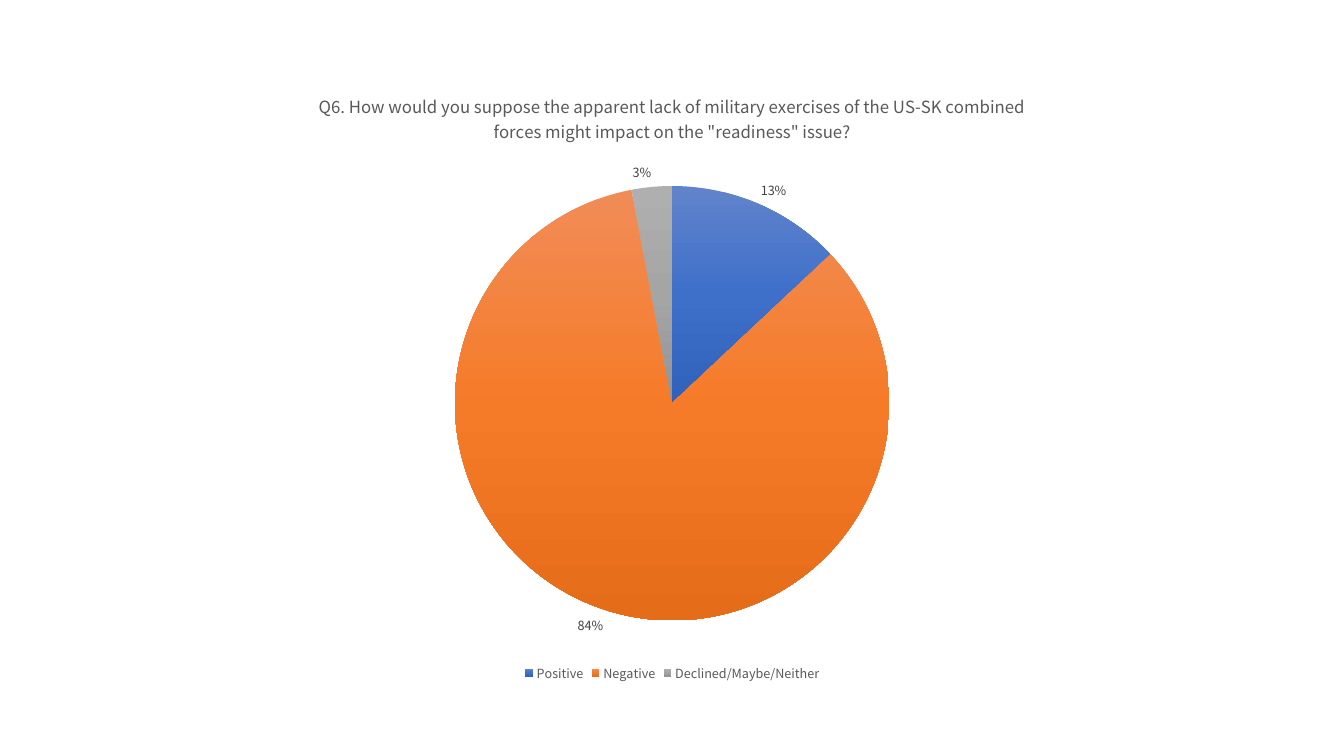
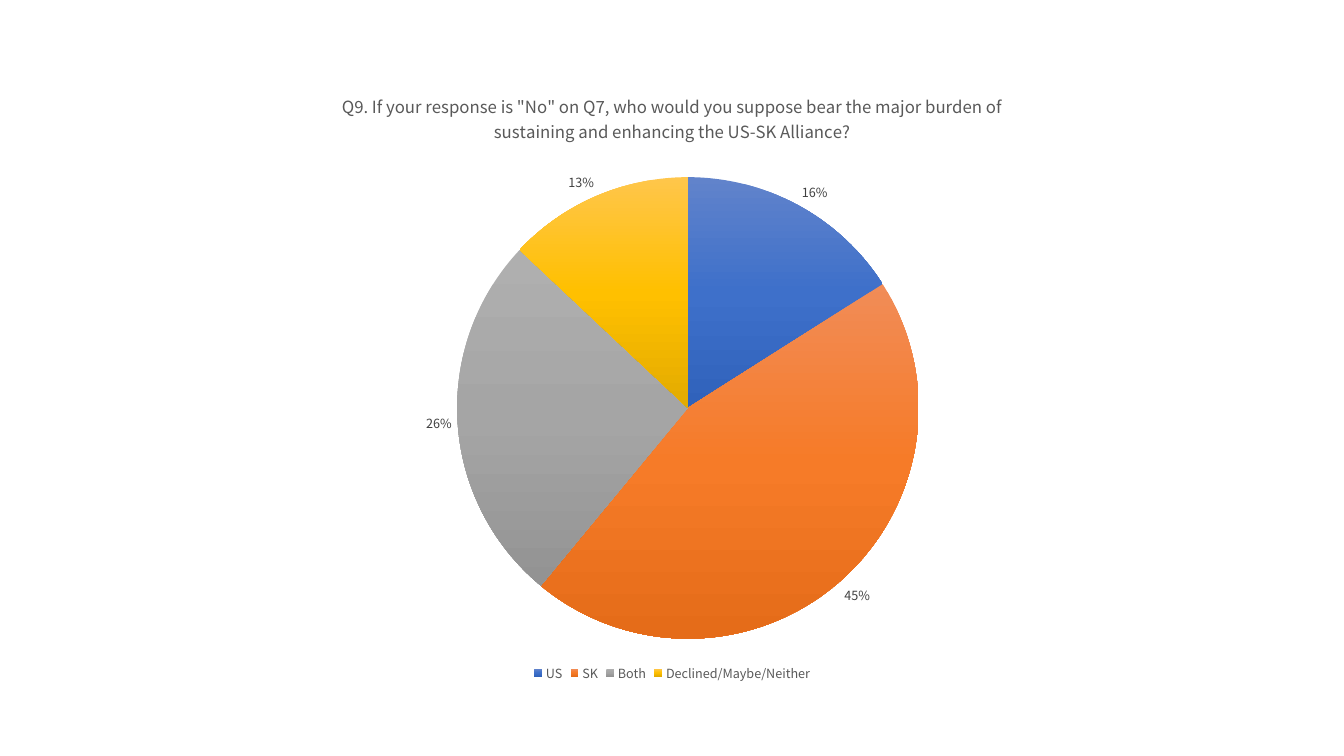
from dataclasses import dataclass

from lxml.etree import SubElement
from pptx import Presentation
from pptx.chart.chart import Chart
from pptx.chart.data import CategoryChartData
from pptx.dml.color import RGBColor
from pptx.enum.chart import XL_CHART_TYPE, XL_LABEL_POSITION, XL_LEGEND_POSITION
from pptx.oxml.ns import qn
from pptx.presentation import Presentation as Deck
from pptx.text.text import Font
from pptx.util import Cm, Pt


@dataclass(frozen=True)
class Theme:
    """Colours, typeface and type sizes shared by all slides."""

    font: str = "Noto Sans CJK KR"
    title_size: int = 12
    small_size: int = 9
    base_size: int = 10
    base_color: str = "000000"
    text_color: str = "595959"
    label_color: str = "404040"
    gradients: tuple[tuple[str, str, str], ...] = (
        ("6183CB", "3E70CA", "3062BB"),
        ("F18C57", "F67B28", "E56C19"),
        ("AFAFAF", "A5A5A5", "939393"),
        ("FFC64B", "FFC000", "E3AB00"),
    )


@dataclass(frozen=True)
class Survey:
    """One survey question with the share of each answer."""

    number: str
    question: str
    shares: dict[str, float]

    @property
    def heading(self) -> str:
        """Return the number and question, parted by an em space."""
        return f"{self.number} {self.question}"


THEME = Theme()
UNDECIDED = "Declined/Maybe/Neither"
SURVEYS = (
    Survey(
        "Q6.",
        "How would you suppose the apparent lack of military exercises of the "
        'US-SK combined forces might impact on the "readiness" issue?',
        {"Positive": 0.13, "Negative": 0.84, UNDECIDED: 0.03},
    ),
    Survey(
        "Q9.",
        'If your response is "No" on Q7, who would you suppose bear the major '
        "burden of sustaining and enhancing the US-SK Alliance?",
        {"US": 0.16, "SK": 0.45, "Both": 0.26, UNDECIDED: 0.13},
    ),
)


def format_font(font: Font, *, size: int, color: str) -> None:
    """Apply the theme typeface with a size and colour."""
    font.name = THEME.font
    font.size = Pt(size)
    font.bold = False
    font.color.rgb = RGBColor.from_string(color)


def write_title(chart: Chart, text: str, *, size: int, color: str) -> None:
    """Write the chart title above the plot."""
    chart.has_title = True
    chart.chart_title.include_in_layout = False
    paragraph = chart.chart_title.text_frame.paragraphs[0]
    run = paragraph.add_run()
    run.text = text
    format_font(paragraph.font, size=size, color=color)
    format_font(run.font, size=size, color=color)


def fill_slices(chart: Chart, count: int) -> None:
    """Give each slice its vertical three-stop gradient and no outline."""
    series = chart.plots[0].series[0]
    for index in range(count):
        slice_format = series.points[index].format
        slice_format.fill.gradient()
        slice_format.fill.gradient_angle = 270
        slice_format.line.fill.background()
    for stop_list, colors in zip(chart.element.iter(qn("a:gsLst")), THEME.gradients):
        for stop in list(stop_list):
            stop_list.remove(stop)
        for position, color in zip((0, 50000, 100000), colors):
            stop = SubElement(stop_list, qn("a:gs"), pos=str(position))
            SubElement(stop, qn("a:srgbClr"), val=color)


def add_labels(chart: Chart) -> None:
    """Show whole percentages outside the slices."""
    plot = chart.plots[0]
    plot.has_data_labels = True
    labels = plot.data_labels
    labels.show_value = True
    labels.show_percentage = False
    labels.number_format = "0%"
    labels.number_format_is_linked = False
    labels.position = XL_LABEL_POSITION.OUTSIDE_END
    format_font(labels.font, size=THEME.small_size, color=THEME.label_color)


def add_legend(chart: Chart) -> None:
    """Place the legend below the pie."""
    chart.has_legend = True
    chart.legend.position = XL_LEGEND_POSITION.BOTTOM
    chart.legend.include_in_layout = False
    format_font(chart.legend.font, size=THEME.small_size, color=THEME.text_color)


def add_survey_slide(presentation: Deck, survey: Survey) -> None:
    """Add a slide with the pie chart of one survey question."""
    slide = presentation.slides.add_slide(presentation.slide_layouts[6])
    data = CategoryChartData(number_format="0%")
    data.categories = list(survey.shares)
    data.add_series(survey.heading, list(survey.shares.values()))
    chart = slide.shapes.add_chart(
        XL_CHART_TYPE.PIE, Cm(5.44), Cm(1.78), Cm(23), Cm(15.5), data
    ).chart
    format_font(chart.font, size=THEME.base_size, color=THEME.base_color)
    chart.plots[0].vary_by_categories = True
    write_title(chart, survey.heading, size=THEME.title_size, color=THEME.text_color)
    fill_slices(chart, len(survey.shares))
    add_labels(chart)
    add_legend(chart)


def main() -> None:
    """Build and save the presentation."""
    presentation = Presentation()
    presentation.slide_width = Cm(33.87)
    presentation.slide_height = Cm(19.05)
    for survey in SURVEYS:
        add_survey_slide(presentation, survey)
    presentation.save("out.pptx")


if __name__ == "__main__":
    main()
